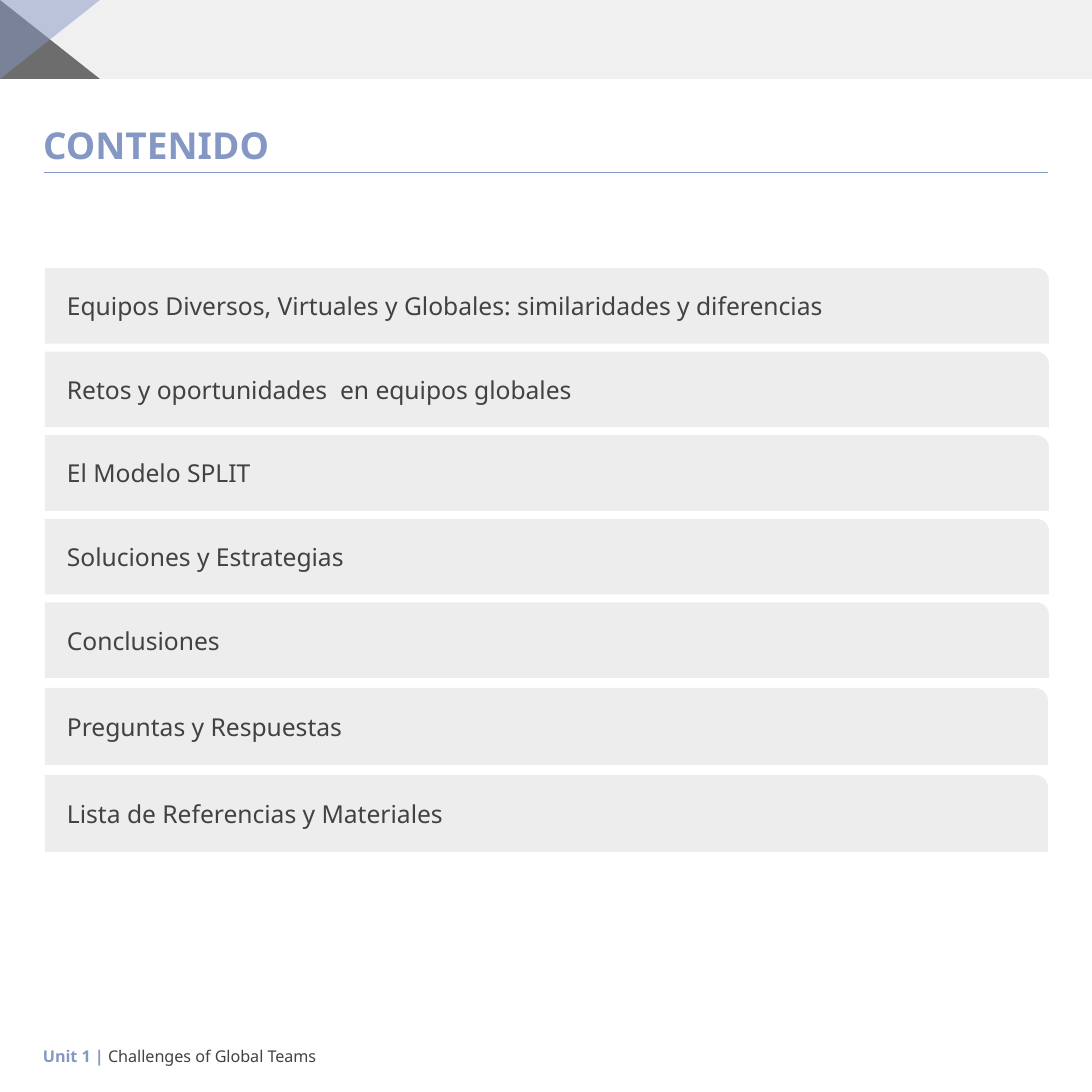
from dataclasses import dataclass

from lxml.etree import SubElement
from pptx import Presentation
from pptx.dml.color import RGBColor
from pptx.enum.shapes import MSO_CONNECTOR, MSO_SHAPE
from pptx.enum.text import MSO_ANCHOR, MSO_AUTO_SIZE, PP_ALIGN
from pptx.oxml.ns import qn
from pptx.util import Emu, Pt

PIXELS_PER_INCH = 111
SLIDE_SIDE = 1092


@dataclass(frozen=True)
class Theme:
    font: str = "Noto Sans"
    accent: RGBColor = RGBColor(0x85, 0x98, 0xC3)
    dark: RGBColor = RGBColor(0x42, 0x42, 0x42)
    row: RGBColor = RGBColor(0xED, 0xED, 0xED)
    title_size: float = 24
    row_size: float = 16
    footer_size: float = 10.5


THEME = Theme()

MAIN_TOPICS = [
    "Equipos Diversos, Virtuales y Globales: similaridades y diferencias",
    "Retos y oportunidades  en equipos globales",
    "El Modelo SPLIT",
    "Soluciones y Estrategias",
    "Conclusiones",
]
CLOSING_TOPICS = ["Preguntas y Respuestas", "Lista de Referencias y Materiales"]


def px(length):
    return Emu(round(length * 914400 / PIXELS_PER_INCH))


def paint(shape, color, opacity=100):
    shape.shadow.inherit = False
    shape.line.fill.background()
    shape.fill.solid()
    shape.fill.fore_color.rgb = color
    if opacity < 100:
        color_node = shape.fill._xPr.find(qn("a:solidFill"))[0]
        SubElement(color_node, qn("a:alpha")).set("val", str(opacity * 1000))


def style(span, size, color, bold=False):
    span.font.name = THEME.font
    span.font.size = Pt(size)
    span.font.bold = bold
    span.font.color.rgb = color


def add_header(page, left, top, width, height):
    band = page.shapes.add_shape(
        MSO_SHAPE.RECTANGLE, px(left), px(top), px(width), px(height))
    paint(band, THEME.dark, 8)

    # Two overlapping triangles at the left end of the band
    right, bottom = left + 100, top + height
    triangles = [
        ([(left, bottom), (right, bottom)], THEME.dark, 75),
        ([(right, top), (left, bottom)], THEME.accent, 50),
    ]
    for corners, color, opacity in triangles:
        outline = page.shapes.build_freeform(px(left), px(top))
        outline.add_line_segments([(px(x), px(y)) for x, y in corners])
        paint(outline.convert_to_shape(), color, opacity)


def add_title(page, text, left, top, width, height):
    title = page.shapes.title
    title.left, title.top = px(left), px(top)
    title.width, title.height = px(width), px(height)
    frame = title.text_frame
    frame.text = text
    frame.auto_size = MSO_AUTO_SIZE.NONE
    frame.vertical_anchor = MSO_ANCHOR.MIDDLE
    para = frame.paragraphs[0]
    para.alignment = PP_ALIGN.LEFT
    para.line_spacing = 0.9
    style(para.runs[0], THEME.title_size, THEME.accent, bold=True)

    # Rule along the lower edge of the title
    edge = px(top + height)
    rule = page.shapes.add_connector(
        MSO_CONNECTOR.STRAIGHT, px(left + 12), edge, px(left + width - 13), edge)
    rule.line.color.rgb = THEME.accent
    rule.line.width = Pt(0.5)
    SubElement(rule._element.spPr, qn("a:effectLst"))


def add_topics(page, topics, gap, left, top, width, height):
    row_height = (height - gap * (len(topics) - 1)) / len(topics)
    for index, topic in enumerate(topics):
        row_top = top + index * (row_height + gap)
        row = page.shapes.add_shape(
            MSO_SHAPE.ROUND_1_RECTANGLE,
            px(left), px(row_top), px(width), px(row_height))
        paint(row, THEME.row)
        frame = row.text_frame
        frame.text = topic
        frame.word_wrap = True
        frame.vertical_anchor = MSO_ANCHOR.MIDDLE
        frame.margin_left = frame.margin_right = px(22)
        frame.margin_top = frame.margin_bottom = px(22)
        para = frame.paragraphs[0]
        para.alignment = PP_ALIGN.LEFT
        style(para.runs[0], THEME.row_size, THEME.dark)


def add_footer(page, left, top, width, height):
    footer = page.shapes.add_textbox(px(left), px(top), px(width), px(height))
    frame = footer.text_frame
    frame.word_wrap = False
    frame.auto_size = MSO_AUTO_SIZE.SHAPE_TO_FIT_TEXT
    para = frame.paragraphs[0]
    for text, color, bold in [
        ("Unit 1 | ", THEME.accent, True),
        ("Challenges of Global Teams", THEME.dark, False),
    ]:
        span = para.add_run()
        span.text = text
        style(span, THEME.footer_size, color, bold)


def main():
    deck = Presentation()
    deck.slide_width = deck.slide_height = px(SLIDE_SIDE)
    page = deck.slides.add_slide(deck.slide_layouts.get_by_name("Title Only"))

    add_header(page, 0, 0, SLIDE_SIDE, 79)
    add_title(page, "CONTENIDO", 32, 122, 1029, 50)
    add_topics(page, MAIN_TOPICS, 8, 45, 268, 1004, 410)
    add_topics(page, CLOSING_TOPICS, 10, 45, 688, 1003, 164)
    add_footer(page, 32, 1041, 301, 31)

    deck.save("out.pptx")


if __name__ == "__main__":
    main()
